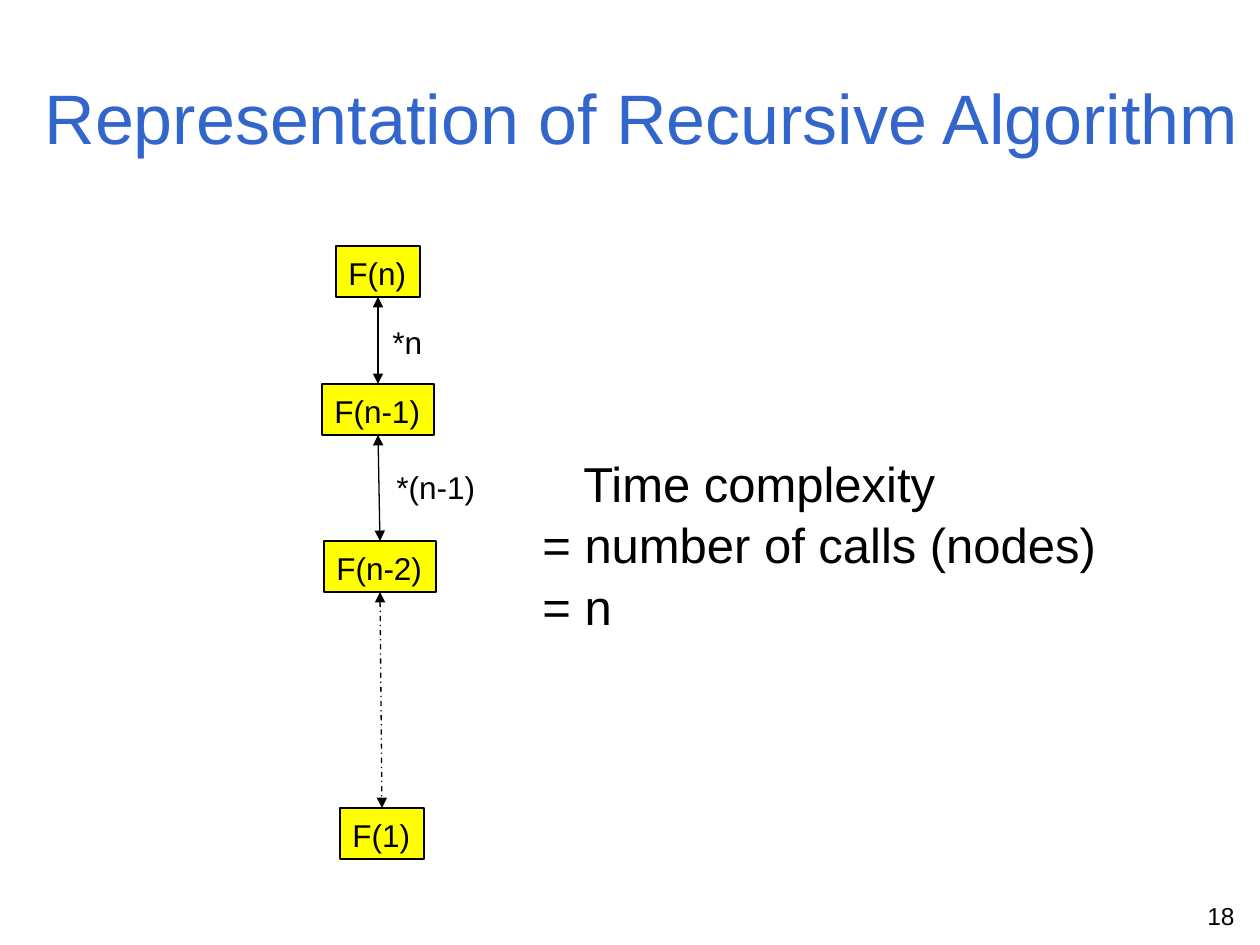
from itertools import pairwise

from lxml import etree
from pptx import Presentation
from pptx.dml.color import RGBColor
from pptx.enum import dml, shapes, text
from pptx.oxml import ns
from pptx.util import Emu, Pt

HUES = {"ink": "000000", "title": "3366CC", "node": "FFFF00"}
FONT = "Arial"
SCALE = 914400 / 126


def px(n):
    return Emu(round(n * SCALE))


def hue(name):
    return RGBColor.from_string(HUES[name])


def style(frame, lines, size, ink="ink", align=text.PP_ALIGN.LEFT, lead=1.05):
    frame.text = "\n".join(lines)
    for para in frame.paragraphs:
        para.alignment = align
        para.line_spacing = lead
        look = {"name": FONT, "size": Pt(size)}
        for key, value in look.items():
            setattr(para.font, key, value)
        para.font.color.rgb = hue(ink)


def label(slide, box, lines, size, wrap=False, **look):
    frame = slide.shapes.add_textbox(*map(px, box)).text_frame
    frame.word_wrap = wrap
    style(frame, lines, size, **look)
    return frame


def node(slide, box, name):
    rect = slide.shapes.add_shape(shapes.MSO_SHAPE.RECTANGLE, *map(px, box))
    rect.shadow.inherit = False
    rect.fill.solid()
    rect.fill.fore_color.rgb = hue("node")
    rect.line.color.rgb = hue("ink")
    rect.line.width = Pt(0.75)
    frame = rect.text_frame
    frame.word_wrap = False
    frame.vertical_anchor = text.MSO_ANCHOR.TOP
    style(frame, [name], 18)
    return rect


def link(slide, top, low, dash):
    line = slide.shapes.add_connector(shapes.MSO_CONNECTOR.STRAIGHT, 0, 0, 0, 0)
    line.begin_connect(top, 2)
    line.end_connect(low, 0)
    line.line.color.rgb = hue("ink")
    line.line.width = Pt(0.75)
    if dash:
        line.line.dash_style = dash
    # Arrowheads at both ends, no shadow
    stroke = line.line._get_or_add_ln()
    for end in ("a:headEnd", "a:tailEnd"):
        etree.SubElement(stroke, ns.qn(end), type="triangle")
    etree.SubElement(line._element.spPr, ns.qn("a:effectLst"))


def heading(slide, box, words):
    title = slide.shapes.title
    spot = dict(zip(("left", "top", "width", "height"), map(px, box)))
    for key, value in spot.items():
        setattr(title, key, value)
    title.text_frame.vertical_anchor = text.MSO_ANCHOR.MIDDLE
    style(title.text_frame, [words], 40, ink="title", lead=1.0)


def chain(slide, x, y):
    # Calls, from the first down to the last
    calls = [("F(n)", 14, 0, 84), ("F(n-1)", 0, 138, 112),
             ("F(n-2)", 2, 295, 112), ("F(1)", 18, 562, 84)]
    nodes = [node(slide, (x + dx, y + dy, wide, 51), name)
             for name, dx, dy, wide in calls]
    dashes = [None, None, dml.MSO_LINE.DASH_DOT]
    for (top, low), dash in zip(pairwise(nodes), dashes):
        link(slide, top, low, dash)
    # Factors beside the arrows
    for name, dx, dy, wide in [("*n", 58, 69, 55), ("*(n-1)", 62, 214, 105)]:
        label(slide, (x + dx, y + dy, wide, 51), [name], 18)


def cost(slide, box):
    lines = ["Time complexity", "= number of calls (nodes)", "= n"]
    frame = label(slide, box, lines, 28)
    first = frame.paragraphs[0]._p.get_or_add_pPr()
    first.set("marL", str(px(41)))
    first.set("indent", "0")


def main():
    deck = Presentation()
    deck.slide_width, deck.slide_height = px(1260), px(945)
    slide = deck.slides.add_slide(deck.slide_layouts[5])
    heading(slide, (32, 38, 1228, 158), "Representation of Recursive Algorithm")
    chain(slide, 322, 246)
    cost(slide, (530, 444, 586, 190))
    # Page number
    label(slide, (954, 893, 293, 39), ["18"], 14, wrap=True,
          align=text.PP_ALIGN.RIGHT)
    deck.save("out.pptx")


if __name__ == "__main__":
    main()
